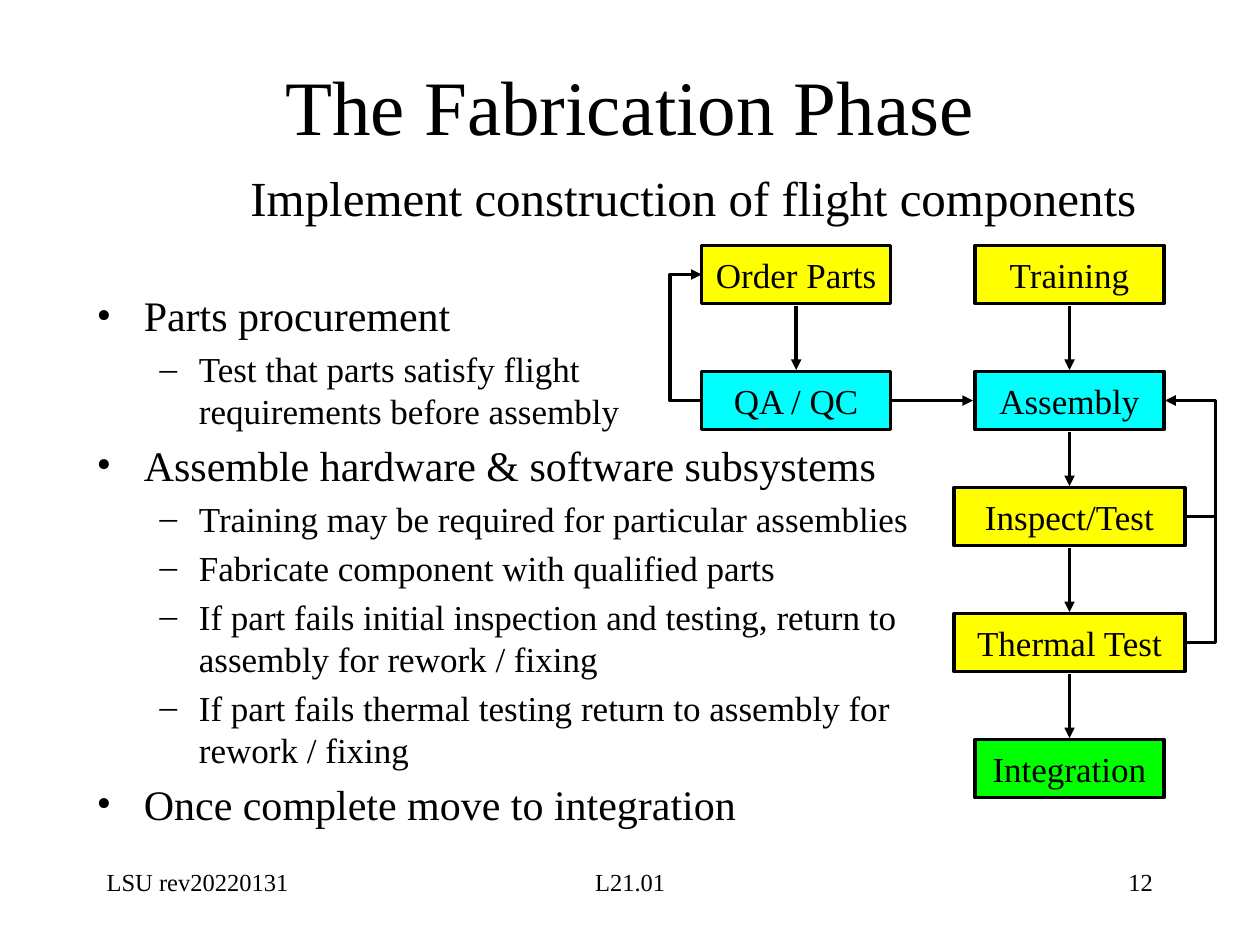
from typing import NamedTuple

from lxml.etree import SubElement
from pptx import Presentation
from pptx.dml.color import RGBColor
from pptx.enum.shapes import MSO_CONNECTOR as Link, MSO_SHAPE as Kind
from pptx.enum.text import MSO_ANCHOR as Anchor, PP_ALIGN as Align
from pptx.oxml.ns import qn
from pptx.util import Cm, Pt

BLACK = RGBColor(0, 0, 0)
YELLOW = RGBColor(255, 255, 0)
CYAN = RGBColor(0, 255, 255)
GREEN = RGBColor(0, 255, 0)
FONT = "Times New Roman"
HIGH = 1.17  # height of every step, in cm


class Step(NamedTuple):
    text: str
    mid: float
    top: float
    wide: float
    fill: RGBColor

    @property
    def left(self) -> float:
        return self.mid - self.wide / 2

    @property
    def right(self) -> float:
        return self.mid + self.wide / 2

    @property
    def level(self) -> float:
        return self.top + HIGH / 2


class Point(NamedTuple):
    text: str
    sub: bool = False


WEST, EAST = 16.05, 21.56
SLIM, BROAD = 3.81, 4.65
ORDER = Step("Order Parts", WEST, 4.95, SLIM, YELLOW)
CHECK = Step("QA / QC", WEST, 7.49, SLIM, CYAN)
TRAIN = Step("Training", EAST, 4.95, SLIM, YELLOW)
BUILD = Step("Assembly", EAST, 7.49, SLIM, CYAN)
INSPECT = Step("Inspect/Test", EAST, 9.83, BROAD, YELLOW)
THERMAL = Step("Thermal Test", EAST, 12.37, BROAD, YELLOW)
FINISH = Step("Integration", EAST, 14.91, SLIM, GREEN)
CHAIN = [TRAIN, BUILD, INSPECT, THERMAL, FINISH]

POINTS = [
    Point("Parts procurement"),
    Point("Test that parts satisfy flight\vrequirements before assembly", True),
    Point("Assemble hardware & software subsystems"),
    Point("Training may be required for particular assemblies", True),
    Point("Fabricate component with qualified parts", True),
    Point("If part fails initial inspection and testing, return to "
          "assembly for rework / fixing", True),
    Point("If part fails thermal testing return to assembly for "
          "rework / fixing", True),
    Point("Once complete move to integration"),
]


def write(para, text: str, *, size: float, align=Align.LEFT,
          before: float = 0, line: float = 1) -> None:
    para.text = text
    para.alignment = align
    para.space_before = Pt(before)
    para.line_spacing = line
    for run in para.runs:
        run.font.name = FONT
        run.font.size = Pt(size)
        run.font.color.rgb = BLACK


def add_text(slide, text: str, left: float, top: float, wide: float,
             high: float, **form) -> None:
    frame = slide.shapes.add_textbox(
        Cm(left), Cm(top), Cm(wide), Cm(high)).text_frame
    frame.word_wrap = True
    write(frame.paragraphs[0], text, **form)


def add_step(slide, step: Step) -> None:
    box = slide.shapes.add_shape(Kind.RECTANGLE, Cm(step.left), Cm(step.top),
                                 Cm(step.wide), Cm(HIGH))
    box.shadow.inherit = False
    box.fill.solid()
    box.fill.fore_color.rgb = step.fill
    box.line.color.rgb = BLACK
    box.line.width = Pt(2)
    frame = box.text_frame
    frame.word_wrap = False
    frame.vertical_anchor = Anchor.MIDDLE
    write(frame.paragraphs[0], step.text, size=20, align=Align.CENTER)


def add_arrow(slide, x1: float, y1: float, x2: float, y2: float,
              bend: float | None = None) -> None:
    """Draw an arrow; bend is the x of the upright part of an elbow."""
    kind = Link.STRAIGHT if bend is None else Link.ELBOW
    link = slide.shapes.add_connector(kind, Cm(x1), Cm(y1), Cm(x2), Cm(y2))
    link.line.color.rgb = BLACK
    link.line.width = Pt(2)
    SubElement(link.line._get_or_add_ln(), qn("a:tailEnd"), type="triangle")
    props = link._element.spPr
    SubElement(props, qn("a:effectLst"))
    if bend is not None:
        ratio = round((bend - x1) / (x2 - x1) * 100000)
        guides = props.find(qn("a:prstGeom")).get_or_add_avLst()
        SubElement(guides, qn("a:gd"), name="adj1", fmla=f"val {ratio}")


def add_points(slide, points: list[Point]) -> None:
    frame = slide.shapes.add_textbox(
        Cm(1.7), Cm(5.72), Cm(17.35), Cm(10.8)).text_frame
    frame.word_wrap = True
    for i, point in enumerate(points):
        para = frame.add_paragraph() if i else frame.paragraphs[0]
        left, hang, mark = (2.06, 0.79, "–") if point.sub else (0.95, 0.95, "•")
        props = para._p.get_or_add_pPr()
        props.set("marL", str(Cm(left)))
        props.set("indent", str(-Cm(hang)))
        SubElement(props, qn("a:buFont"), typeface=FONT)
        SubElement(props, qn("a:buChar"), char=mark)
        para.level = int(point.sub)
        size = 20 if point.sub else 24
        write(para, point.text, size=size, before=size / 5 if i else 0)


def add_flow(slide) -> None:
    for step in [ORDER, CHECK, *CHAIN]:
        add_step(slide, step)
    for top, low in [(ORDER, CHECK), *zip(CHAIN, CHAIN[1:])]:
        add_arrow(slide, top.mid, top.top + HIGH + 0.05, low.mid, low.top - 0.03)
    add_arrow(slide, CHECK.right, CHECK.level, BUILD.left - 0.04, BUILD.level)
    add_arrow(slide, CHECK.left - 0.03, CHECK.level,
              ORDER.left, ORDER.level, bend=13.51)
    for test in (INSPECT, THERMAL):
        add_arrow(slide, test.right + 0.04, test.level,
                  BUILD.right + 0.03, BUILD.level, bend=24.51)


def main() -> None:
    deck = Presentation()
    deck.slide_width, deck.slide_height = Cm(25.4), Cm(19.05)
    slide = deck.slides.add_slide(deck.slide_layouts[5])
    title = slide.shapes.title
    title.left, title.top = Cm(3.99), Cm(0.53)
    title.width, title.height = Cm(17.42), Cm(3.18)
    title.text_frame.vertical_anchor = Anchor.MIDDLE
    write(title.text_frame.paragraphs[0], "The Fabrication Phase",
          size=44, align=Align.CENTER)
    add_flow(slide)
    add_points(slide, POINTS)
    add_text(slide, "Implement construction of flight components",
             4.24, 3.38, 19.48, 1.47, size=28, align=Align.CENTER, line=0.9)
    for text, left, wide, align in [
        ("LSU rev20220131", 1.9, 5.29, Align.LEFT),
        ("L21.01", 8.68, 8.05, Align.CENTER),
        ("12", 18.2, 5.29, Align.RIGHT),
    ]:
        add_text(slide, text, left, 17.35, wide, 1.27, size=14, align=align)
    deck.save("out.pptx")


if __name__ == "__main__":
    main()
